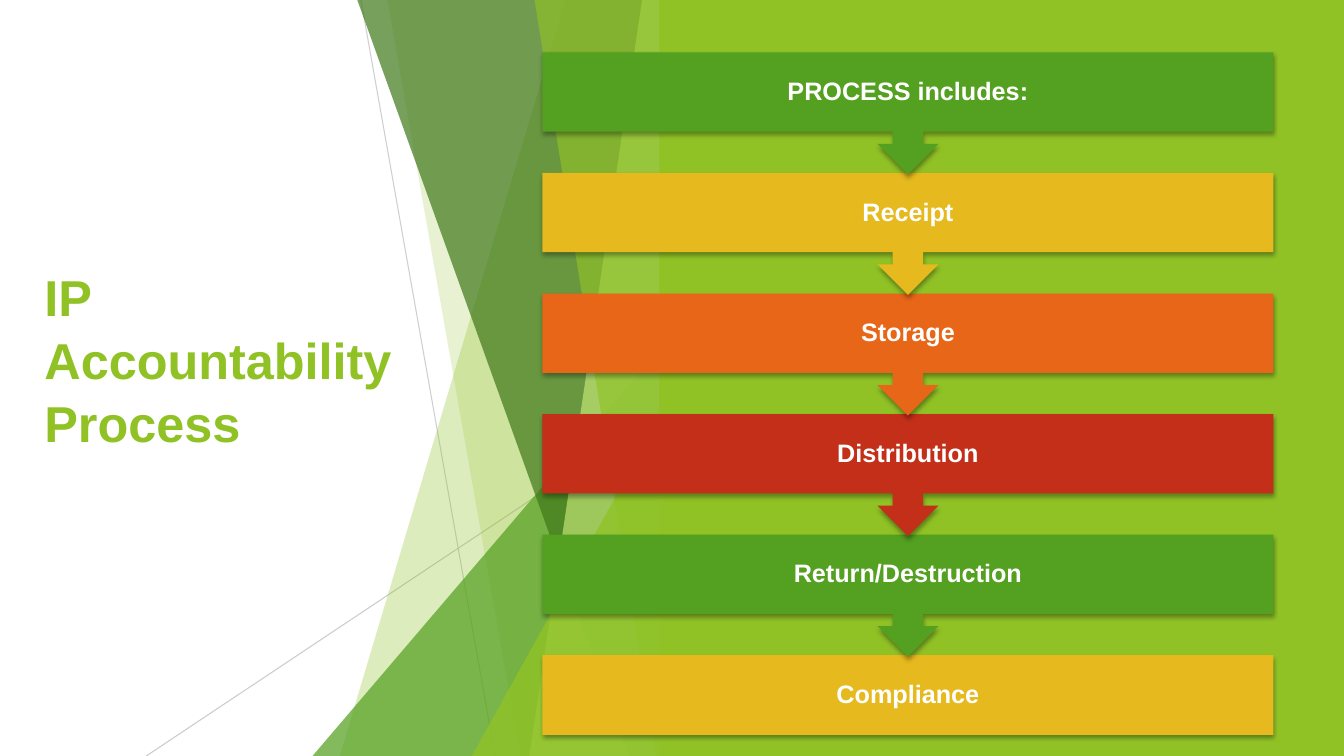
from dataclasses import dataclass

from lxml.etree import SubElement
from pptx import Presentation
from pptx.dml.color import RGBColor
from pptx.enum.shapes import MSO_CONNECTOR as Connector, MSO_SHAPE as Preset
from pptx.enum.text import MSO_ANCHOR as Anchor, MSO_AUTO_SIZE as AutoSize, PP_ALIGN as Align
from pptx.oxml.ns import qn
from pptx.util import Inches, Pt


@dataclass(frozen=True)
class Theme:
    font: str = "Arial"
    title_size: int = 36
    step_size: int = 18
    lime: str = "90C226"
    pale_lime: str = "C0E474"
    green: str = "54A021"
    dark_green: str = "3F7819"
    gold: str = "E6B91E"
    orange: str = "E76618"
    red: str = "C42F1A"
    grey: str = "BFBFBF"
    white: str = "FFFFFF"


THEME = Theme()
WIDTH, HEIGHT = 13.33, 7.5

TITLE = "IP Accountability\vProcess"
STEPS = [
    ("PROCESS includes:", THEME.green),
    ("Receipt", THEME.gold),
    ("Storage", THEME.orange),
    ("Distribution", THEME.red),
    ("Return/Destruction", THEME.green),
    ("Compliance", THEME.gold),
]

# start, end, opacity in percent
RAYS = [((3.58, 0), (4.91, 7.5), 75), ((6.66, 4.03), (1.45, 7.5), 80)]
# Facets share their right edge and bottom.
FACET_RIGHT, FACET_TOP = 6.66, -0.01
# kind, measures, colour, opacity in percent
# "band": left edge at top, left edge at bottom; "wedge": left, top
FACETS = [
    ("band", (5.61, 3.37), THEME.lime, 30),
    ("band", (3.84, 5.16), THEME.lime, 20),
    ("wedge", (3.1, 3.33), THEME.green, 72),
    ("band", (3.54, 6.24), THEME.dark_green, 70),
    ("band", (6.37, 5.25), THEME.pale_lime, 70),
    ("band", (5.3, 6.51), THEME.lime, 65),
    ("wedge", (4.68, 3.93), THEME.lime, 80),
]
PANEL_LEFT = 6.54

STEP_LEFT, STEP_TOP, STEP_WIDTH = 5.38, 0.52, 7.25
STEP_HEIGHT, CALLOUT_HEIGHT, STEP_PITCH = 0.79, 1.21, 1.196


def set_opacity(fill_parent, percent):
    color = next(fill_parent.iter(qn("a:srgbClr")))
    SubElement(color, qn("a:alpha"), val=str(percent * 1000))


def paint(shape, color):
    shape.shadow.inherit = False
    shape.fill.solid()
    shape.fill.fore_color.rgb = RGBColor.from_string(color)
    shape.line.fill.background()


def add_block(shapes, preset, left, top, width, height, color):
    block = shapes.add_shape(preset, Inches(left), Inches(top), Inches(width), Inches(height))
    paint(block, color)
    return block


def add_ray(shapes, start, end, opacity):
    ray = shapes.add_connector(Connector.STRAIGHT, *map(Inches, start + end))
    ray.line.width = Pt(0.75)
    ray.line.color.rgb = RGBColor.from_string(THEME.grey)
    properties = ray._element.spPr
    set_opacity(properties, opacity)
    SubElement(properties, qn("a:effectLst"))


def add_facet(shapes, kind, measures, color, opacity):
    if kind == "band":
        top_left, bottom_left = measures
        corners = [(FACET_RIGHT, FACET_TOP), (FACET_RIGHT, HEIGHT), (bottom_left, HEIGHT)]
        builder = shapes.build_freeform(Inches(top_left), Inches(FACET_TOP))
        builder.add_line_segments([(Inches(x), Inches(y)) for x, y in corners], close=True)
        facet = builder.convert_to_shape()
        paint(facet, color)
    else:
        left, top = measures
        facet = add_block(shapes, Preset.ISOSCELES_TRIANGLE, left, top,
                          FACET_RIGHT - left, HEIGHT - top, color)
        facet.adjustments[0] = 1
    set_opacity(facet._element.spPr, opacity)


def add_drop_shadow(shape):
    effects = shape._element.spPr.find(qn("a:effectLst"))
    shadow = SubElement(effects, qn("a:outerShdw"), blurRad=str(Pt(3)), dist=str(Pt(2)),
                        dir="5400000", rotWithShape="0")
    SubElement(shadow, qn("a:srgbClr"), val="000000")
    set_opacity(shadow, 35)


def style_text(para, size, color):
    para.font.name = THEME.font
    para.font.size = Pt(size)
    para.font.bold = True
    para.font.color.rgb = RGBColor.from_string(color)


def add_title(slide):
    title = slide.shapes.title
    title.left, title.top, title.width, title.height = map(Inches, (0.34, 1.59, 3.88, 4.48))
    frame = title.text_frame
    frame.text = TITLE
    frame.word_wrap = True
    frame.auto_size = AutoSize.NONE
    frame.vertical_anchor = Anchor.MIDDLE
    frame.margin_bottom = Inches(0.61)
    para = frame.paragraphs[0]
    para.alignment = Align.LEFT
    para.line_spacing = 1.04
    style_text(para, THEME.title_size, THEME.lime)


def add_step(shapes, index, label, color):
    """Draw one step; every step but the last points down to the next."""
    top = STEP_TOP + index * STEP_PITCH
    if index == len(STEPS) - 1:
        block = add_block(shapes, Preset.RECTANGLE, STEP_LEFT, top, STEP_WIDTH, STEP_HEIGHT, color)
    else:
        block = add_block(shapes, Preset.UP_ARROW_CALLOUT, STEP_LEFT, top,
                          STEP_WIDTH, CALLOUT_HEIGHT, color)
        block.rotation = 180
    add_drop_shadow(block)

    box = shapes.add_textbox(*map(Inches, (STEP_LEFT, top, STEP_WIDTH, STEP_HEIGHT)))
    frame = box.text_frame
    frame.text = label
    frame.word_wrap = True
    frame.vertical_anchor = Anchor.MIDDLE
    frame.margin_left = frame.margin_right = Inches(0.14)
    frame.margin_top = frame.margin_bottom = Inches(0.14)
    para = frame.paragraphs[0]
    para.alignment = Align.CENTER
    para.line_spacing = 0.9
    style_text(para, THEME.step_size, THEME.white)


def main():
    deck = Presentation()
    deck.slide_width, deck.slide_height = Inches(WIDTH), Inches(HEIGHT)
    slide = deck.slides.add_slide(deck.slide_layouts.get_by_name("Title Only"))
    shapes = slide.shapes
    add_title(slide)
    for ray in RAYS:
        add_ray(shapes, *ray)
    for facet in FACETS:
        add_facet(shapes, *facet)
    add_block(shapes, Preset.RECTANGLE, PANEL_LEFT, 0, WIDTH - PANEL_LEFT, HEIGHT, THEME.lime)
    for index, (label, color) in reversed(list(enumerate(STEPS))):
        add_step(shapes, index, label, color)
    deck.save("out.pptx")


if __name__ == "__main__":
    main()
